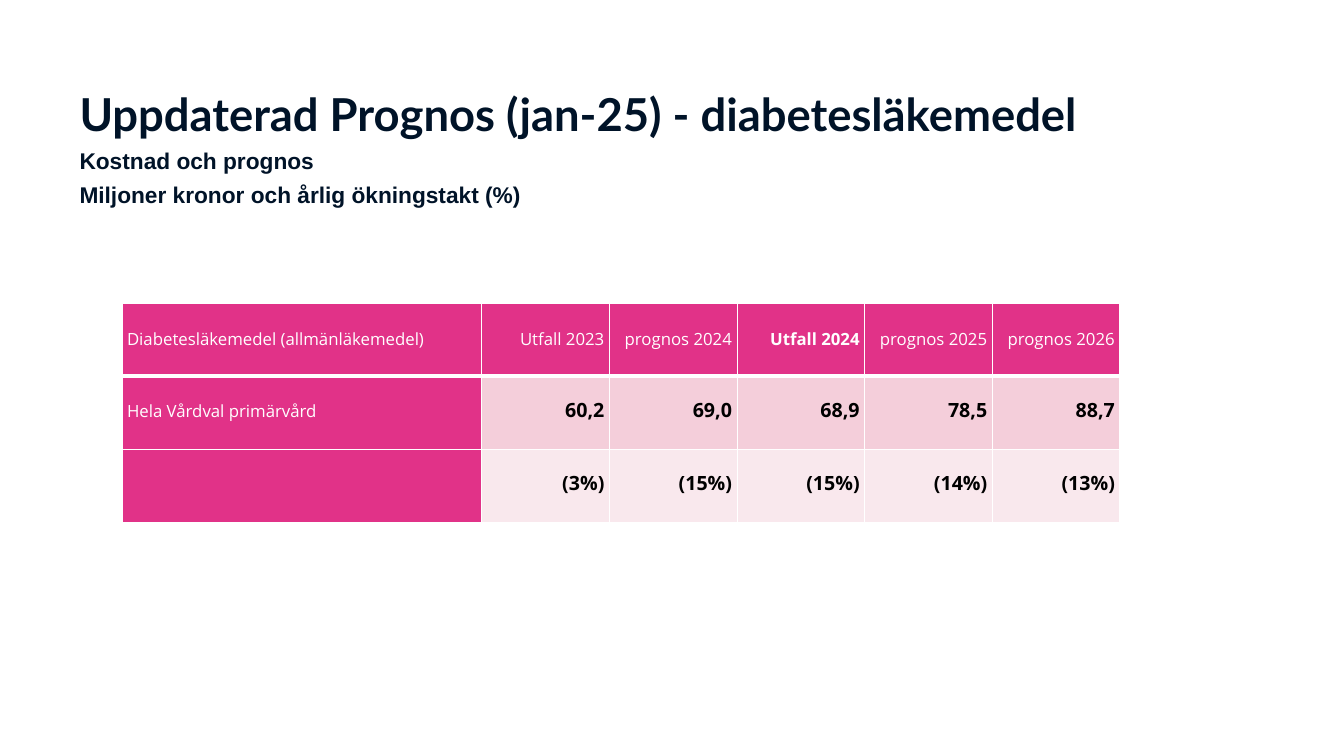
from copy import deepcopy

from lxml.etree import SubElement
from pptx import Presentation
from pptx.dml.color import RGBColor
from pptx.enum.text import MSO_ANCHOR as Anchor, PP_ALIGN as Align
from pptx.oxml.ns import qn
from pptx.util import Inches, Pt

# Content: title lines as (text, style)
TITLE_LINES = [
    ("Uppdaterad Prognos (jan-25) - diabetesläkemedel", "title"),
    ("Kostnad och prognos", "subtitle"),
    ("Miljoner kronor och årlig ökningstakt (%)", "subtitle"),
]
TABLE_ROWS = [
    ["Diabetesläkemedel (allmänläkemedel)", "Utfall 2023", "prognos 2024",
     "Utfall 2024", "prognos 2025", "prognos 2026"],
    ["Hela Vårdval primärvård", "60,2", "69,0", "68,9", "78,5", "88,7"],
    ["", "(3%)", "(15%)", "(15%)", "(14%)", "(13%)"],
]
BOLD_HEADING = "Utfall 2024"

# Theme: styles are (font, size, colour, bold)
THEME = {
    "title": ("Lato", 32.4, "001328", True),
    "subtitle": ("Arial", 16.2, "001328", True),
    "heading": ("Open Sans", 12, "FFFFFF", False),
    "heading_bold": ("Open Sans", 12, "FFFFFF", True),
    "value": ("Open Sans", 14, "000000", True),
    "heading_fill": "E13288",
    "row_fills": ["F4CEDA", "F9E8ED"],
    "border": "FFFFFF",
}

# Layout
TITLE_AT = (0.69, 0.25, 10.58, 2.28)
TABLE_AT = (1.21, 3.01, 9.9, 2.17)
LABEL_WIDTH = 3.57
CELL_INSET = 0.05


def add_span(para, text, style):
    name, size, colour, bold = THEME[style]
    span = para.add_run()
    span.text = text
    span.font.name = name
    span.font.size = Pt(size)
    span.font.bold = bold
    span.font.color.rgb = RGBColor.from_string(colour)
    return span


def add_title(page):
    box = page.shapes.add_textbox(*map(Inches, TITLE_AT))
    frame = box.text_frame
    frame.word_wrap = True
    frame.vertical_anchor = Anchor.MIDDLE
    para = frame.paragraphs[0]
    para.line_spacing = 1.25
    for index, (text, style) in enumerate(TITLE_LINES):
        span = add_span(para, text, style)
        if index < len(TITLE_LINES) - 1:
            # The break takes the size of its own line
            para.add_line_break()
            line_break = para._p.findall(qn("a:br"))[-1]
            line_break.append(deepcopy(span._r.find(qn("a:rPr"))))


def set_borders(cell, is_header):
    properties = cell._tc.get_or_add_tcPr()
    widths = {"lnL": 1, "lnR": 1, "lnT": 1, "lnB": 3 if is_header else 1}
    for position, (side, width) in enumerate(widths.items()):
        line = SubElement(properties, qn("a:" + side), w=str(Pt(width)))
        fill = SubElement(line, qn("a:solidFill"))
        SubElement(fill, qn("a:srgbClr"), val=THEME["border"])
        properties.insert(position, line)


def fill_cell(cell, text, row, column):
    is_header, is_label = row == 0, column == 0
    is_heading = is_header or is_label
    colour = THEME["heading_fill"] if is_heading else THEME["row_fills"][row - 1]
    cell.fill.solid()
    cell.fill.fore_color.rgb = RGBColor.from_string(colour)
    set_borders(cell, is_header)
    cell.margin_left = cell.margin_right = Inches(CELL_INSET)
    cell.margin_top = cell.margin_bottom = 0
    cell.vertical_anchor = Anchor.MIDDLE
    if not text:
        return
    para = cell.text_frame.paragraphs[0]
    para.alignment = Align.LEFT if is_label else Align.RIGHT
    para.line_spacing = Pt(14.4)
    if is_heading:
        style = "heading_bold" if text == BOLD_HEADING else "heading"
    else:
        style = "value"
        para.space_after = Pt(8)
    add_span(para, text, style)


def add_forecast_table(page):
    row_count, column_count = len(TABLE_ROWS), len(TABLE_ROWS[0])
    frame = page.shapes.add_table(row_count, column_count, *map(Inches, TABLE_AT))
    table = frame.table
    value_width = (TABLE_AT[2] - LABEL_WIDTH) / (column_count - 1)
    for index, column in enumerate(table.columns):
        column.width = Inches(value_width if index else LABEL_WIDTH)
    for row, texts in enumerate(TABLE_ROWS):
        table.rows[row].height = Inches(TABLE_AT[3] / row_count)
        for column, text in enumerate(texts):
            fill_cell(table.cell(row, column), text, row, column)


def main():
    deck = Presentation()
    deck.slide_width, deck.slide_height = Inches(13.33), Inches(7.5)
    page = deck.slides.add_slide(deck.slide_layouts[6])
    add_title(page)
    add_forecast_table(page)
    deck.save("out.pptx")


if __name__ == "__main__":
    main()
